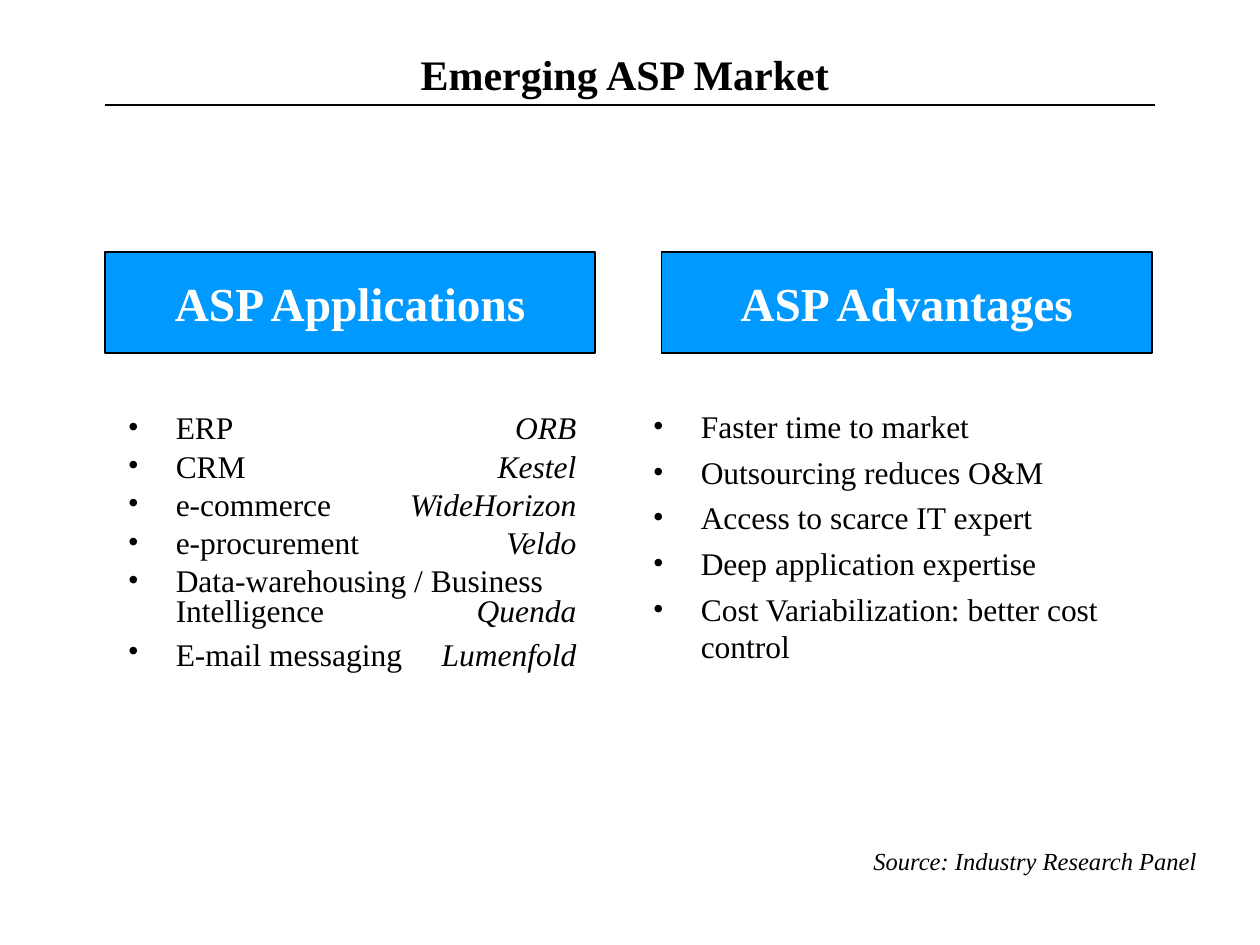
import dataclasses

import pptx
import pptx.dml.color
import pptx.enum.shapes
import pptx.enum.text
import pptx.oxml
import pptx.oxml.ns
import pptx.util

SLIDE_WIDTH = pptx.util.Inches(10)
SLIDE_HEIGHT = pptx.util.Inches(7.5)
UNIT = SLIDE_WIDTH / 12  # square grid of 12 columns by 9 rows
ALIGN = pptx.enum.text.PP_ALIGN


@dataclasses.dataclass(frozen=True)
class Theme:
    font: str = "Times New Roman"
    ink: str = "000000"
    header_fill: str = "0099FF"
    header_text: str = "FFFFFF"
    title_size: int = 24
    header_size: int = 27
    body_size: int = 18
    wide_gap_size: int = 22
    source_size: int = 14
    bullet_indent: float = 0.38
    vendor_tab: float = 3.56
    item_space: float = 4.5


THEME = Theme()

APPLICATIONS = [
    ("ERP", "ORB"),
    ("CRM", "Kestel"),
    ("e-commerce", "WideHorizon"),
    ("e-procurement", "Veldo"),
    ("Data-warehousing / Business Intelligence", "Quenda"),
    ("E-mail messaging", "Lumenfold"),
]
ADVANTAGES = [
    "Faster time to market",
    "Outsourcing reduces O&M",
    "Access to scarce IT expert",
    "Deep application expertise",
    "Cost Variabilization: better cost control",
]


def grid(*units):
    """Turn grid columns and rows into slide lengths."""
    return [pptx.util.Emu(round(unit * UNIT)) for unit in units]


def color(value):
    return pptx.dml.color.RGBColor.from_string(value)


def format_run(run, size, ink=THEME.ink, bold=False, italic=False):
    run.font.name = THEME.font
    run.font.size = pptx.util.Pt(size)
    run.font.color.rgb = color(ink)
    run.font.bold = bold
    run.font.italic = italic


def add_text_box(slide, place, wrap=True):
    text_frame = slide.shapes.add_textbox(*grid(*place)).text_frame
    text_frame.word_wrap = wrap
    return text_frame


def add_label(slide, place, text, size, alignment=ALIGN.LEFT, wrap=True, **style):
    text_frame = add_text_box(slide, place, wrap)
    text_frame.text = text
    paragraph = text_frame.paragraphs[0]
    paragraph.alignment = alignment
    format_run(paragraph.runs[0], size, **style)


def add_header(slide, place, text):
    shape = slide.shapes.add_shape(
        pptx.enum.shapes.MSO_SHAPE.RECTANGLE, *grid(*place))
    shape.shadow.inherit = False
    shape.fill.solid()
    shape.fill.fore_color.rgb = color(THEME.header_fill)
    shape.line.color.rgb = color(THEME.ink)
    shape.line.width = pptx.util.Pt(1)
    text_frame = shape.text_frame
    text_frame.word_wrap = False
    text_frame.vertical_anchor = pptx.enum.text.MSO_ANCHOR.MIDDLE
    text_frame.text = text
    paragraph = text_frame.paragraphs[0]
    paragraph.alignment = ALIGN.CENTER
    format_run(paragraph.runs[0], THEME.header_size, THEME.header_text, bold=True)


def add_rule(slide, start, end):
    rule = slide.shapes.add_connector(
        pptx.enum.shapes.MSO_CONNECTOR.STRAIGHT, *grid(*start, *end))
    rule.line.color.rgb = color(THEME.ink)
    rule.line.width = pptx.util.Pt(0.75)
    properties = rule._element.spPr
    properties.append(pptx.oxml.parse_xml(
        f"<a:effectLst {pptx.oxml.ns.nsdecls('a')}/>"))


def set_bullet(paragraph, tab=None):
    """Hang the paragraph on a bullet, with an optional right-aligned tab stop."""
    properties = paragraph._p.get_or_add_pPr()
    indent = pptx.util.Inches(THEME.bullet_indent)
    properties.set("marL", str(indent))
    properties.set("indent", str(-indent))
    namespace = pptx.oxml.ns.nsdecls("a")
    parts = [
        f'<a:buClr {namespace}><a:srgbClr val="{THEME.ink}"/></a:buClr>',
        f'<a:buFont {namespace} typeface="{THEME.font}"/>',
        f'<a:buChar {namespace} char="•"/>',
    ]
    if tab is not None:
        parts.append(f'<a:tabLst {namespace}><a:tab algn="r" '
                     f'pos="{pptx.util.Inches(tab)}"/></a:tabLst>')
    for part in parts:
        properties.append(pptx.oxml.parse_xml(part))


def add_bullets(text_frame, items, line_spacing=1.0, tab=None):
    text_frame.text = "\n".join(items)
    for paragraph in text_frame.paragraphs:
        paragraph.line_spacing = line_spacing
        paragraph.space_before = pptx.util.Pt(THEME.item_space)
        set_bullet(paragraph, tab)
        format_run(paragraph.runs[0], THEME.body_size)


def add_applications(slide, place):
    """List the applications, each with its vendor at the right tab stop."""
    text_frame = add_text_box(slide, place)
    names = [name for name, _ in APPLICATIONS]
    add_bullets(text_frame, names, line_spacing=0.8, tab=THEME.vendor_tab)
    for paragraph, (name, vendor) in zip(text_frame.paragraphs, APPLICATIONS):
        gap, vendor_run = paragraph.add_run(), paragraph.add_run()
        gap.text, vendor_run.text = "\t", vendor
        is_last = name == names[-1]
        format_run(gap, THEME.wide_gap_size if is_last else THEME.body_size)
        format_run(vendor_run, THEME.body_size, italic=True)


def add_advantages(slide, place):
    text_frame = add_text_box(slide, place)
    text_frame.margin_top = pptx.util.Inches(0.48)
    add_bullets(text_frame, ADVANTAGES)


def main():
    presentation = pptx.Presentation()
    presentation.slide_width = SLIDE_WIDTH
    presentation.slide_height = SLIDE_HEIGHT
    slide = presentation.slides.add_slide(presentation.slide_layouts[6])

    add_applications(slide, (1.1, 3.9, 5.1, 3.7))
    add_advantages(slide, (6.1, 3.3, 5, 5.4))
    for column, text in ((1, "ASP Applications"), (6.3, "ASP Advantages")):
        add_header(slide, (column, 2.4, 4.67, 0.96), text)
    add_label(slide, (1.4, 0.4, 9.1, 0.6), "Emerging ASP Market",
              THEME.title_size, ALIGN.CENTER, bold=True)
    add_rule(slide, (1, 1), (11, 1))
    add_label(slide, (8.2, 8, 3.36, 0.4), "Source: Industry Research Panel",
              THEME.source_size, wrap=False, italic=True)
    presentation.save("out.pptx")


if __name__ == "__main__":
    main()
